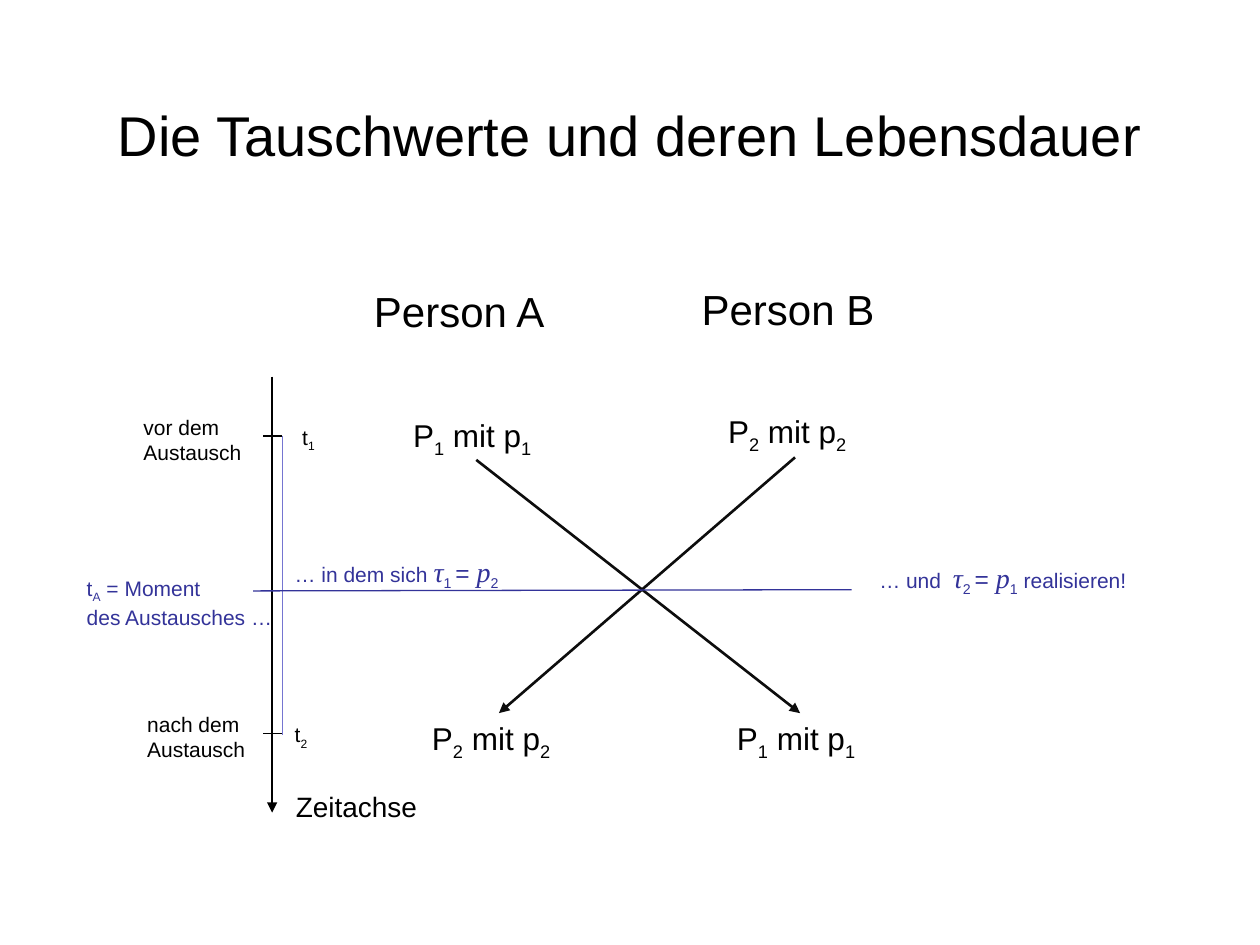
import pptx
import pptx.util
import pptx.dml.color
import pptx.enum.shapes
import pptx.enum.text
import pptx.oxml.ns
from lxml import etree

Inches = pptx.util.Inches
BLACK, INK, BLUE, LIGHT_BLUE = "000000", "0D0D0D", "333399", "7575D1"
SUB = dict(sub=True)
SYMBOL = dict(font="Times New Roman", size=16, italic=True)
FORMULA = dict(size=14)
FORMULA_SUB = dict(size=14, sub=True)


def rgb(color):
    return pptx.dml.color.RGBColor.from_string(color)


def add_text(p, text, font="Arial", size=12, color=BLACK, italic=False, sub=False):
    """Add text to a paragraph; a newline becomes a line break."""
    for i, line in enumerate(text.split("\n")):
        if i:
            p.add_line_break()
        r = p.add_run()
        r.text = line
        r.font.name, r.font.size = font, pptx.util.Pt(size)
        r.font.italic = italic
        r.font.color.rgb = rgb(color)
        if sub:
            r.font._element.set("baseline", "-25000")


def add_label(s, x, y, w, h, *runs, **base):
    """Place a text box; each run is a string or a (string, format) pair."""
    tf = s.shapes.add_textbox(Inches(x), Inches(y), Inches(w), Inches(h)).text_frame
    tf.word_wrap = False
    tf.auto_size = pptx.enum.text.MSO_AUTO_SIZE.SHAPE_TO_FIT_TEXT
    for run in runs:
        text, extra = (run, {}) if isinstance(run, str) else run
        add_text(tf.paragraphs[0], text, **{**base, **extra})


def add_line(s, x1, y1, x2, y2, color=BLACK, width=0.75, arrow=False):
    line = s.shapes.add_connector(pptx.enum.shapes.MSO_CONNECTOR.STRAIGHT,
                                  Inches(x1), Inches(y1), Inches(x2), Inches(y2))
    line.line.color.rgb = rgb(color)
    line.line.width = pptx.util.Pt(width)
    qn = pptx.oxml.ns.qn
    if arrow:
        etree.SubElement(line.line._get_or_add_ln(), qn("a:tailEnd"), type="triangle")
    etree.SubElement(line._element.spPr, qn("a:effectLst"))


def add_title(s, x, y, w, h):
    title = s.shapes.title
    title.left, title.top, title.width, title.height = map(Inches, (x, y, w, h))
    tf = title.text_frame
    tf.vertical_anchor = pptx.enum.text.MSO_ANCHOR.MIDDLE
    p = tf.paragraphs[0]
    p.alignment = pptx.enum.text.PP_ALIGN.CENTER
    add_text(p, "Die Tauschwerte und deren Lebensdauer", size=32)


def add_exchange(s, x, y):
    """Two persons who swap their goods along crossing arrows."""
    add_label(s, x, y + 0.02, 1.57, 0.5, "Person A", size=24)
    add_label(s, x + 2.6, y, 1.59, 0.5, "Person B", size=24)
    goods = [(0.31, 1.05, "1"), (0.46, 3.46, "2"), (2.81, 1.02, "2"), (2.88, 3.46, "1")]
    for dx, dy, n in goods:
        add_label(s, x + dx, y + dy, 1.17, 0.4,
                  "P", (n, SUB), " mit p", (n, SUB), size=18)
    for x1, y1, x2 in [(0.91, 1.45, 3.48), (3.44, 1.43, 1.09)]:
        add_line(s, x + x1, y + y1, x + x2, y + 3.46, INK, 1.5, arrow=True)


def add_time_axis(s, x, y):
    """Vertical axis with the times before and after the exchange."""
    add_line(s, x, y, x, y + 3.46, width=1.5, arrow=True)
    add_label(s, x + 0.09, y + 3.23, 1.17, 0.37, "Zeitachse", size=16)
    ticks = [("vor dem", "1", 0.47, -1.12, 0.14), ("nach dem", "2", 2.83, -1.09, 0.08)]
    for when, n, dy, label_dx, time_dx in ticks:
        add_line(s, x - 0.07, y + dy, x + 0.08, y + dy)
        add_label(s, x + label_dx, y + dy - 0.22, 0.99, 0.5, when + "\nAustausch")
        add_label(s, x + time_dx, y + dy - 0.14, 0.31, 0.3, "t", (n, SUB))
    add_line(s, x + 0.08, y + 0.47, x + 0.08, y + 2.84, LIGHT_BLUE)


def equation(a, b):
    return [("τ", SYMBOL), (a + " ", FORMULA_SUB), ("= ", FORMULA),
            ("p", SYMBOL), (b, FORMULA_SUB)]


def add_moment(s, x, y):
    """Moment of the exchange: a level line with its statement."""
    add_line(s, x + 6.17, y + 0.33, x + 1.42, y + 0.34, BLUE)
    add_label(s, x, y + 0.17, 1.73, 0.5, "t", ("A", SUB),
              " = Moment\ndes Austausches …", color=BLUE)
    add_label(s, x + 1.65, y, 1.95, 0.37,
              "… in dem sich ", *equation("1", "2"), color=BLUE)
    add_label(s, x + 6.29, y + 0.05, 2.22, 0.37,
              "… und  ", *equation("2", "1"), " realisieren!", color=BLUE)


def main():
    prs = pptx.Presentation()
    prs.slide_width, prs.slide_height = Inches(10), Inches(7.5)
    s = prs.slides.add_slide(prs.slide_layouts[5])
    add_title(s, 0.5, 0.44, 9, 1.25)
    add_exchange(s, 2.87, 2.2)
    add_time_axis(s, 2.16, 2.99)
    add_moment(s, 0.59, 4.35)
    prs.save("out.pptx")


if __name__ == "__main__":
    main()
